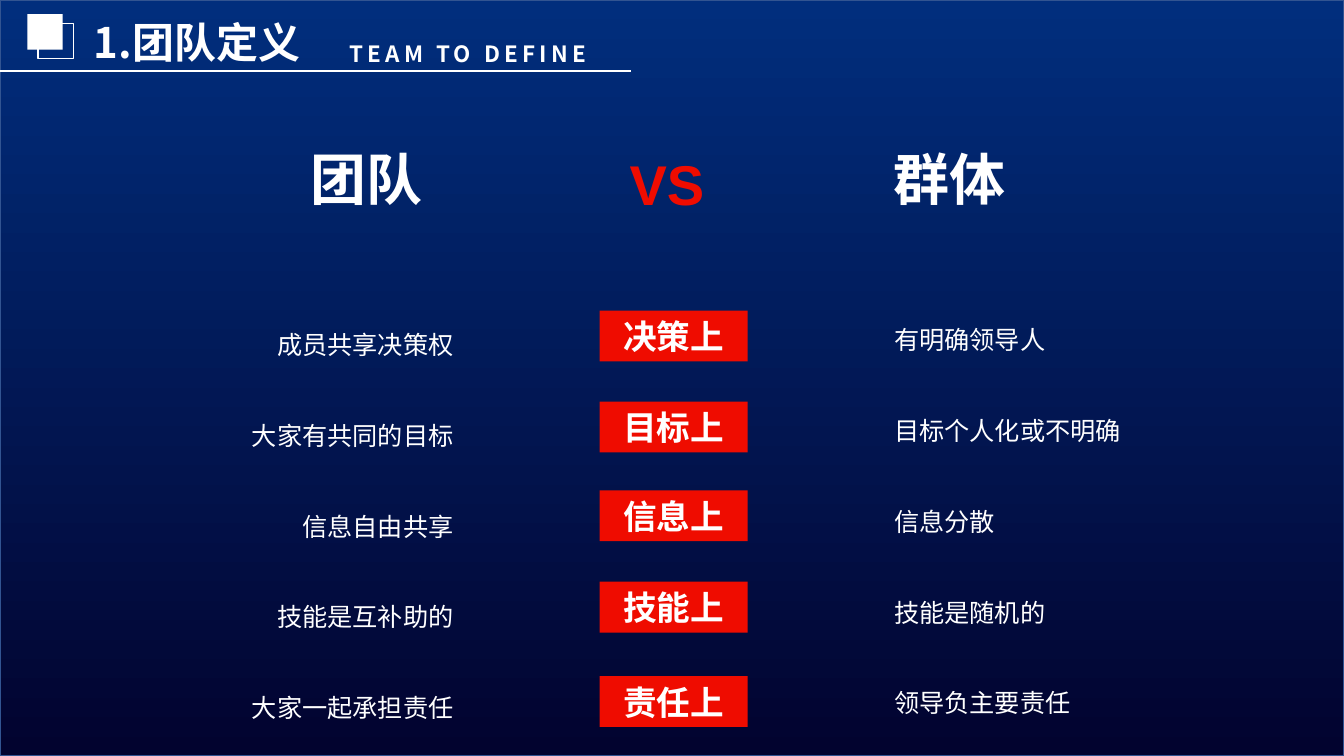
from lxml import etree
from pptx import Presentation
from pptx.dml.color import RGBColor
from pptx.enum import shapes, text
from pptx.oxml import ns
from pptx.util import Cm, Pt

WHITE, RED = "FFFFFF", "EF0C00"
SANS, ARIAL = "Noto Sans CJK SC", "Arial"
LEFT, RIGHT, CENTER = text.PP_ALIGN.LEFT, text.PP_ALIGN.RIGHT, text.PP_ALIGN.CENTER
JUSTIFY = text.PP_ALIGN.JUSTIFY
LINE_HEIGHT = 1.2

TITLE = "1.团队定义"
SUBTITLE = "TEAM TO DEFINE"
HEADINGS = [
    ("团队", 7.57, 3.68, 4.11, WHITE),
    ("群体", 22.28, 3.68, 3.81, WHITE),
    ("VS", 15.62, 3.81, 2.69, RED),
]
TEAM = ["成员共享决策权", "大家有共同的目标", "信息自由共享", "技能是互补助的", "大家一起承担责任"]
CROWD = ["有明确领导人", "目标个人化或不明确", "信息分散", "技能是随机的", "领导负主要责任"]
LISTS = [(TEAM, 1.57, 6.65, RIGHT), (CROWD, 22.28, 6.53, LEFT)]
BADGES = [("决策上", 7.83), ("目标上", 10.12), ("信息上", 12.36), ("技能上", 14.66), ("责任上", 17.04)]


def color(value):
    return RGBColor.from_string(value)


def place(shape, left, top, width, height):
    shape.left, shape.top, shape.width, shape.height = map(Cm, (left, top, width, height))


def write(shape, lines, size, name, align, bold=True, tint=WHITE, spacing=1,
          anchor=text.MSO_ANCHOR.TOP):
    frame = shape.text_frame
    frame.word_wrap = True
    frame.auto_size = text.MSO_AUTO_SIZE.NONE
    frame.vertical_anchor = anchor
    frame.text = "\n".join(lines)
    for paragraph in frame.paragraphs:
        paragraph.alignment = align
        paragraph.line_spacing = Pt(round(size * LINE_HEIGHT * spacing, 1))
        paragraph.space_before = Pt(0)
        properties = paragraph._p.get_or_add_pPr()
        properties.set("marL", "0")
        properties.set("indent", "0")
        etree.SubElement(properties, ns.qn("a:buNone"))
        font = paragraph.font
        font.size, font.bold, font.name = Pt(size), bold, name
        font.color.rgb = color(tint)
        defaults = properties.find(ns.qn("a:defRPr"))
        etree.SubElement(defaults, ns.qn("a:ea")).set("typeface", SANS)


def add_box(parent, left, top, width, height, fill=None, line=None):
    shape = parent.add_shape(shapes.MSO_SHAPE.RECTANGLE, *map(Cm, (left, top, width, height)))
    shape.shadow.inherit = False
    if fill:
        shape.fill.solid()
        shape.fill.fore_color.rgb = color(fill)
    else:
        shape.fill.background()
    if line:
        shape.line.color.rgb = color(line)
        shape.line.width = Pt(1)
    else:
        shape.line.fill.background()
    return shape


def add_text(slide, left, top, width, height):
    return slide.shapes.add_textbox(*map(Cm, (left, top, width, height)))


def add_backdrop(slide, width, height):
    backdrop = add_box(slide.shapes, 0, 0, width, height, line="325491")
    backdrop.fill.gradient()
    backdrop.fill.gradient_angle = 270
    for stop, (position, tint) in zip(backdrop.fill.gradient_stops, [(0, "012E7D"), (1, "02032F")]):
        stop.position = position
        stop.color.rgb = color(tint)
    slide.shapes._spTree.insert(2, backdrop._element)


def add_header(slide):
    place(slide.shapes.title, 2.11, 0.28, 6.78, 1.55)
    write(slide.shapes.title, [TITLE], 30, SANS, LEFT)
    subtitle = add_text(slide, 8.56, 0.89, 7.34, 0.94)
    write(subtitle, [SUBTITLE], 16, SANS, LEFT)
    subtitle.text_frame.paragraphs[0].runs[0]._r.get_or_add_rPr().set("spc", "300")
    rule = slide.shapes.add_connector(
        shapes.MSO_CONNECTOR.STRAIGHT, Cm(0), Cm(1.79), Cm(15.9), Cm(1.79))
    rule.line.color.rgb = color(WHITE)
    rule.line.width = Pt(1.5)
    etree.SubElement(rule._element.spPr, ns.qn("a:effectLst"))
    add_box(slide.shapes, 0.69, 0.36, 0.89, 0.89, fill=WHITE)
    add_box(slide.shapes, 0.96, 0.59, 0.89, 0.89, line=WHITE)


def add_comparison(slide):
    bodies = [item for item in slide.placeholders if item.placeholder_format.idx in (1, 2)]
    for body, (lines, left, top, align) in zip(bodies, LISTS):
        place(body, left, top, 10.11, 11.7)
        write(body, lines, 18, ARIAL, align, bold=False, spacing=3)
    badges = slide.shapes.add_group_shape()
    for label, top in BADGES:
        badge = add_box(badges.shapes, 15.11, top, 3.73, 1.28, fill=RED)
        write(badge, [label], 24, ARIAL, CENTER, anchor=text.MSO_ANCHOR.MIDDLE)
    for label, left, top, width, tint in HEADINGS:
        heading = add_text(slide, left, top, width, 1.8)
        write(heading, [label], 40, ARIAL, JUSTIFY, tint=tint, spacing=0.9)


def main():
    presentation = Presentation()
    width, height = 33.87, 19.05
    presentation.slide_width, presentation.slide_height = Cm(width), Cm(height)
    slide = presentation.slides.add_slide(presentation.slide_layouts[3])
    add_backdrop(slide, width, height)
    add_header(slide)
    add_comparison(slide)
    presentation.save("out.pptx")


if __name__ == "__main__":
    main()
